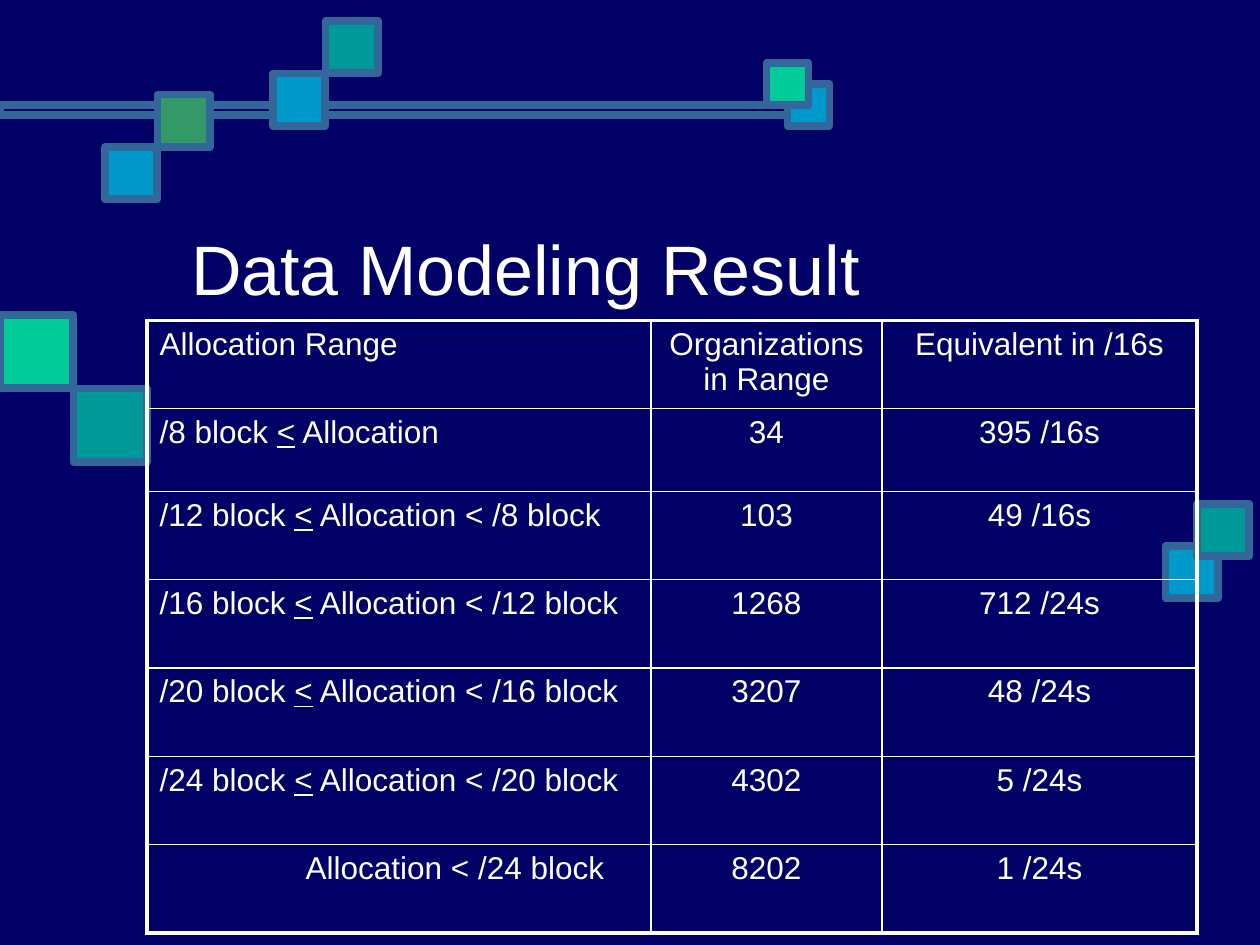
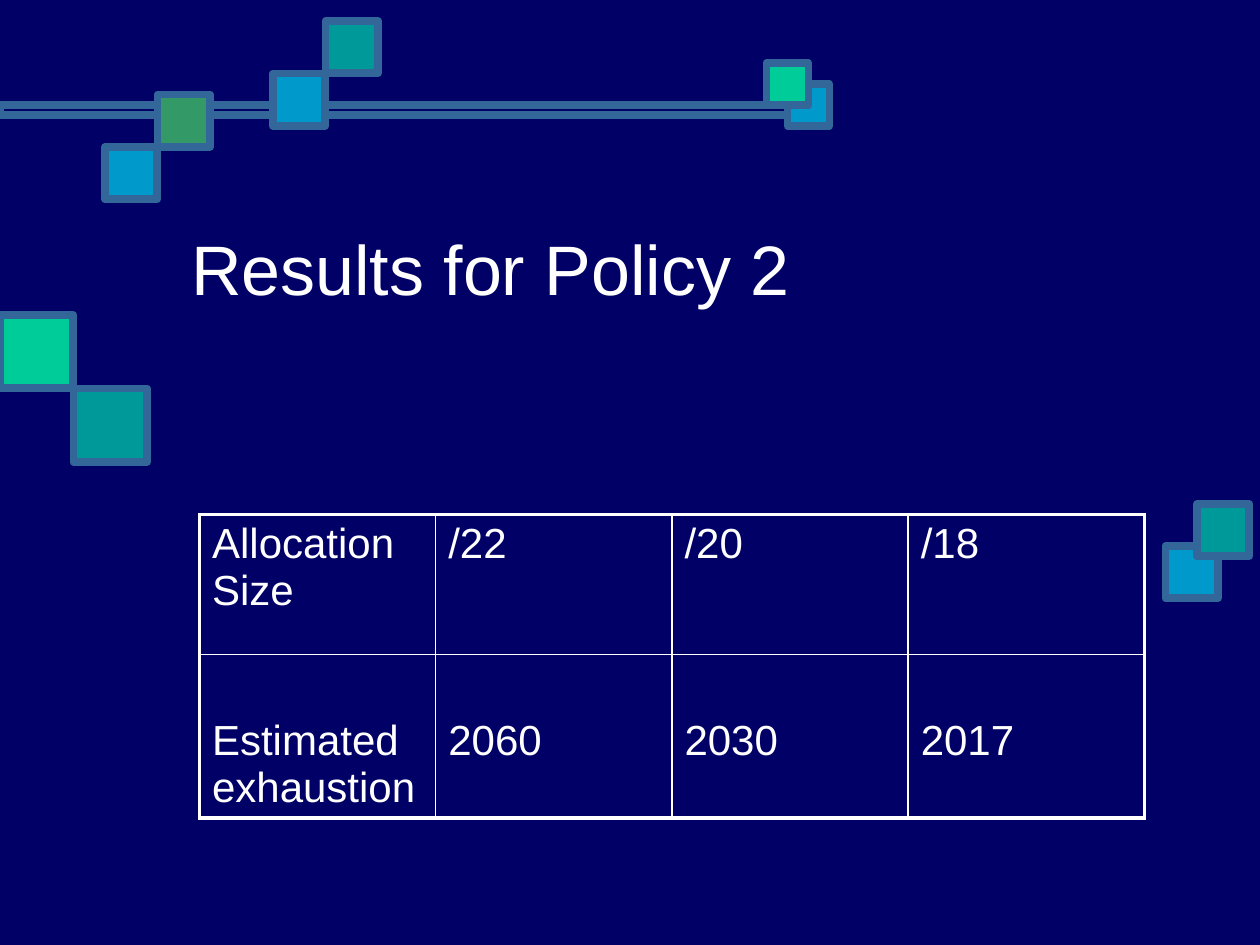
import pptx
import pptx.dml.color
import pptx.enum.shapes
import pptx.enum.text
import pptx.oxml
import pptx.oxml.ns
import pptx.util

Cm = pptx.util.Cm
Pt = pptx.util.Pt
RGBColor = pptx.dml.color.RGBColor
ALIGN = pptx.enum.text.PP_ALIGN

NAVY = RGBColor(0x00, 0x00, 0x66)
STEEL = RGBColor(0x33, 0x66, 0x99)
BLUE = RGBColor(0x00, 0x99, 0xCC)
TEAL = RGBColor(0x00, 0x99, 0x99)
MINT = RGBColor(0x00, 0xCC, 0x99)
GREEN = RGBColor(0x33, 0x99, 0x66)
WHITE = RGBColor(0xFF, 0xFF, 0xFF)

FONT = "Arial"
GRID = Cm(2.54) // 12  # every part of the design sits on this grid

# left, top, side (in grid units) and colour, from back to front
SQUARES = [
    (75, 8, 4, BLUE),
    (73, 6, 4, MINT),
    (111, 52, 5, BLUE),
    (114, 48, 5, TEAL),
    (0, 30, 7, MINT),
    (7, 37, 7, TEAL),
    (26, 7, 5, BLUE),
    (10, 14, 5, BLUE),
    (15, 9, 5, GREEN),
    (31, 2, 5, TEAL),
]

ALLOCATIONS = [
    ("Allocation Range", "Organizations in Range", "Equivalent in /16s"),
    ("/8 block _<_ Allocation", "34", "395 /16s"),
    ("/12 block _<_ Allocation < /8 block", "103", "49 /16s"),
    ("/16 block _<_ Allocation < /12 block", "1268", "712 /24s"),
    ("/20 block _<_ Allocation < /16 block", "3207", "48 /24s"),
    ("/24 block _<_ Allocation < /20 block", "4302", "5 /24s"),
    ("Allocation < /24 block", "8202", "1 /24s"),
]

EXHAUSTION = [
    ("Allocation Size", "/22", "/20", "/18"),
    ("Estimated exhaustion", "2060", "2030", "2017"),
]


def grid(*units):
    return [int(unit * GRID) for unit in units]


def write(frame, text, size=18, color=WHITE, align=ALIGN.LEFT):
    """Fill a text frame; a part between underscores is underlined."""
    paragraph = frame.paragraphs[0]
    paragraph.alignment = align
    for index, part in enumerate(text.split("_")):
        run = paragraph.add_run()
        run.text = part
        run.font.name = FONT
        run.font.size = Pt(size)
        run.font.color.rgb = color
        if index % 2:
            run.font.underline = True


def set_borders(cell, widths, color=WHITE):
    """Draw the left, right, top and bottom border in the given points."""
    properties = cell._tc.get_or_add_tcPr()
    for index, (side, width) in enumerate(zip("LRTB", widths)):
        border = pptx.oxml.parse_xml(
            f'<a:ln{side} {pptx.oxml.ns.nsdecls("a")} w="{Pt(width)}">'
            f'<a:solidFill><a:srgbClr val="{color}"/></a:solidFill></a:ln{side}>'
        )
        properties.insert(index, border)


class Deck:
    inner_border = 1
    outer_border = 2.25

    def __init__(self):
        self.prs = pptx.Presentation()
        self.prs.slide_width, self.prs.slide_height = grid(120, 90)
        background = self.prs.slide_master.background.fill
        background.solid()
        background.fore_color.rgb = NAVY
        self.slide = None

    def add_slide(self, title):
        self.slide = self.prs.slides.add_slide(self.prs.slide_layouts[5])
        self.box(0, 10, 77, 1)
        for left, top, side, color in SQUARES:
            self.box(left, top, side, side, color)
        self.title(title)

    def box(self, left, top, width, height, color=None):
        box = self.slide.shapes.add_shape(
            pptx.enum.shapes.MSO_SHAPE.RECTANGLE, *grid(left, top, width, height)
        )
        box.shadow.inherit = False
        box.line.color.rgb = STEEL
        box.line.width = Pt(4.5)
        if color is None:
            box.fill.background()
        else:
            box.fill.solid()
            box.fill.fore_color.rgb = color

    def title(self, text):
        title = self.slide.shapes.title
        title.left, title.top, title.width, title.height = grid(17, 16, 93, 19)
        frame = title.text_frame
        frame.word_wrap = True
        frame.auto_size = pptx.enum.text.MSO_AUTO_SIZE.NONE
        frame.vertical_anchor = pptx.enum.text.MSO_ANCHOR.MIDDLE
        write(frame, text, size=40)

    def table(self, rows, left, top, columns, heights, size, value_align=ALIGN.LEFT):
        """Add a bordered table; columns are grid units, heights centimetres."""
        last_row, last_column = len(rows) - 1, len(columns) - 1
        table = self.slide.shapes.add_table(
            len(rows), len(columns), *grid(left, top, sum(columns)), Cm(sum(heights))
        ).table
        table.first_row = table.horz_banding = False
        for column, width in zip(table.columns, grid(*columns)):
            column.width = width
        for r, (height, texts) in enumerate(zip(heights, rows)):
            table.rows[r].height = Cm(height)
            for c, text in enumerate(texts):
                cell = table.cell(r, c)
                cell.fill.background()
                write(cell.text_frame, text, size, align=value_align if c else ALIGN.LEFT)
                on_edge = (c == 0, c == last_column, r == 0, r == last_row)
                set_borders(
                    cell,
                    [self.outer_border if edge else self.inner_border for edge in on_edge],
                )
        return table


def main():
    deck = Deck()

    deck.add_slide("Data Modeling Result")
    allocations = deck.table(
        ALLOCATIONS, 14, 30.5, [48, 22, 30], [1.78, 1.67] + [1.78] * 5,
        size=18, value_align=ALIGN.CENTER,
    )
    allocations.cell(len(ALLOCATIONS) - 1, 0).margin_left = Cm(3.2)

    deck.add_slide("Results for Policy 2")
    exhaustion = deck.table(EXHAUSTION, 19, 49, [22.5] * 4, [2.82, 3.27], size=24)
    for cell in exhaustion.rows[1].cells:
        cell.margin_top = Cm(1.28)

    deck.prs.save("out.pptx")


if __name__ == "__main__":
    main()
